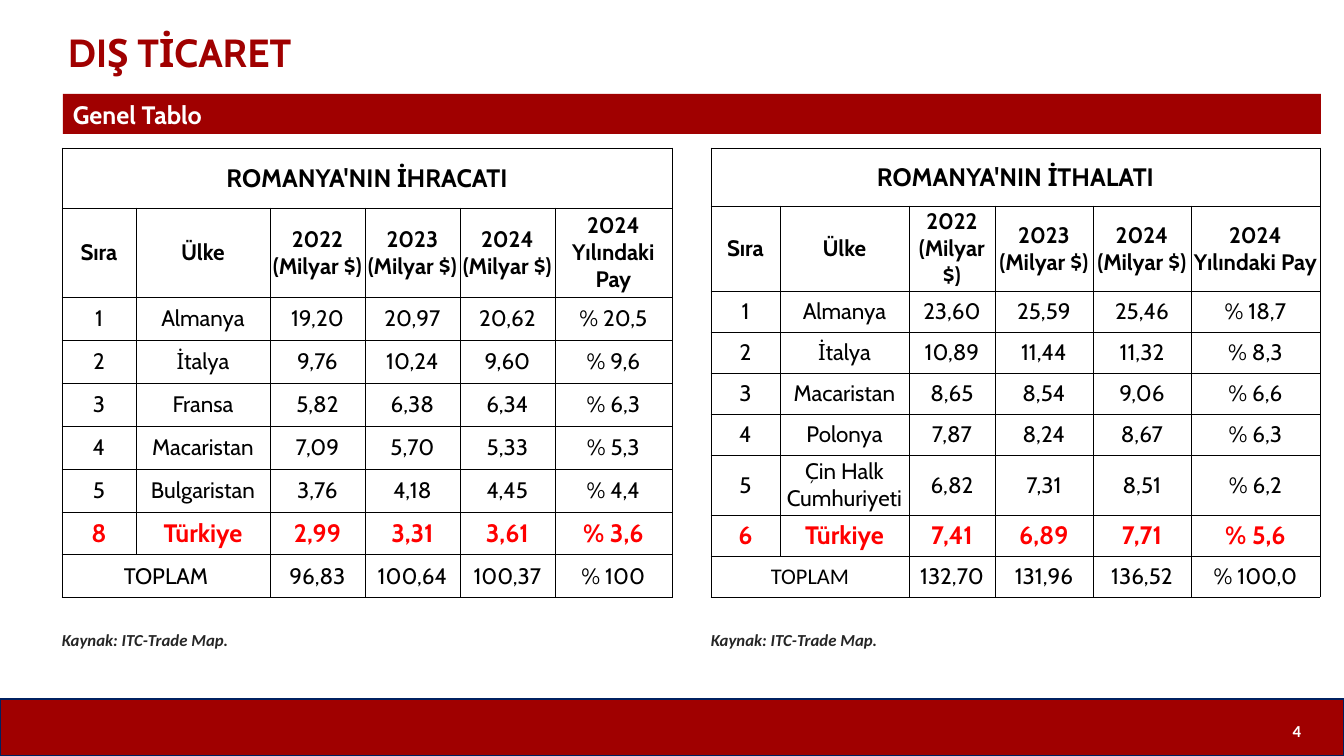
from lxml import etree
from pptx import Presentation
from pptx import util as u
from pptx.dml import color
from pptx.enum import shapes, text
from pptx.oxml import ns

EMU_PER_PX = 914400 / 100.8
RED, BLACK, WHITE, ALERT = "A00000", "000000", "FFFFFF", "FF0000"
ALIGN, ANCHOR = text.PP_ALIGN, text.MSO_ANCHOR
CENTER, MIDDLE = ALIGN.CENTER, ANCHOR.MIDDLE
TABLE_TOP, SOURCE_TOP = 148, 626

HEADINGS = ["Sıra", "Ülke", "2022 (Milyar $)", "2023 (Milyar $)",
            "2024 (Milyar $)", "2024 Yılındaki Pay"]
EXPORTS = dict(
    title="ROMANYA'NIN İHRACATI", left=62, total_font="Cabin",
    columns=[74, 134, 95, 95, 95, 117], heights=[60, 89] + [43] * 7,
    rows=[
        ["1", "Almanya", "19,20", "20,97", "20,62", "% 20,5"],
        ["2", "İtalya", "9,76", "10,24", "9,60", "% 9,6"],
        ["3", "Fransa", "5,82", "6,38", "6,34", "% 6,3"],
        ["4", "Macaristan", "7,09", "5,70", "5,33", "% 5,3"],
        ["5", "Bulgaristan", "3,76", "4,18", "4,45", "% 4,4"],
        ["8", "Türkiye", "2,99", "3,31", "3,61", "% 3,6"],
        ["TOPLAM", "", "96,83", "100,64", "100,37", "% 100"],
    ])
IMPORTS = dict(
    title="ROMANYA'NIN İTHALATI", left=711, total_font="Calibri",
    columns=[69, 129, 86, 98, 98, 129],
    heights=[58, 85] + [41] * 4 + [60] + [41] * 2,
    rows=[
        ["1", "Almanya", "23,60", "25,59", "25,46", "% 18,7"],
        ["2", "İtalya", "10,89", "11,44", "11,32", "% 8,3"],
        ["3", "Macaristan", "8,65", "8,54", "9,06", "% 6,6"],
        ["4", "Polonya", "7,87", "8,24", "8,67", "% 6,3"],
        ["5", "Çin Halk Cumhuriyeti", "6,82", "7,31", "8,51", "% 6,2"],
        ["6", "Türkiye", "7,41", "6,89", "7,71", "% 5,6"],
        ["TOPLAM", "", "132,70", "131,96", "136,52", "% 100,0"],
    ])


def px(length):
    return u.Emu(round(length * EMU_PER_PX))


def rgb(value):
    return color.RGBColor.from_string(value)


def set_margins(target, margins):
    for side, margin in zip(("left", "top", "right", "bottom"), margins):
        setattr(target, f"margin_{side}", px(margin))


def write(frame, words, size, tint, align=ALIGN.LEFT, **format_values):
    para = frame.paragraphs[0]
    para.alignment = align
    span = para.add_run()
    span.text = words
    values = {"name": "Cabin", "size": u.Pt(size), "bold": True, **format_values}
    for name, value in values.items():
        setattr(span.font, name, value)
    span.font.color.rgb = rgb(tint)
    return para


def add_panel(page, kind, area, fill=None, line=None):
    panel = page.shapes.add_shape(kind, *map(px, area))
    panel.shadow.inherit = False
    if fill:
        panel.fill.solid()
        panel.fill.fore_color.rgb = rgb(fill)
    else:
        panel.fill.background()
    if line:
        panel.line.color.rgb = rgb(line)
        panel.line.width = u.Pt(1)
    else:
        panel.line.fill.background()
    return panel


def add_text_frame(page, area, margins, anchor=ANCHOR.TOP):
    frame = page.shapes.add_textbox(*map(px, area)).text_frame
    frame.word_wrap = True
    frame.vertical_anchor = anchor
    set_margins(frame, margins)
    return frame


def add_borders(cell):
    properties = cell._tc.get_or_add_tcPr()
    for side in ("lnL", "lnR", "lnT", "lnB"):
        border = etree.SubElement(properties, ns.qn(f"a:{side}"), w=str(u.Pt(0.5)))
        fill = etree.SubElement(border, ns.qn("a:solidFill"))
        etree.SubElement(fill, ns.qn("a:srgbClr"), val=BLACK)


def cell_format(row, column, last_row, total_font):
    if row == 0:
        return dict(size=18, tint=BLACK)
    if row == last_row - 1:
        return dict(size=18, tint=ALERT)
    name = total_font if (row, column) == (last_row, 0) else "Cabin"
    return dict(size=16, tint=BLACK, bold=row == 1, name=name)


def add_trade_table(page, title, left, total_font, columns, heights, rows):
    grid = [[title] + [""] * 5, HEADINGS] + rows
    last_row = len(grid) - 1
    area = (left, TABLE_TOP, sum(columns), sum(heights))
    table = page.shapes.add_table(len(grid), len(columns), *map(px, area)).table
    table.first_row = table.horz_banding = False
    for column, width in zip(table.columns, columns):
        column.width = px(width)
    for row, height in zip(table.rows, heights):
        row.height = px(height)
    for i, line in enumerate(grid):
        for j, words in enumerate(line):
            cell = table.cell(i, j)
            cell.vertical_anchor = MIDDLE
            set_margins(cell, (1, 1, 1, 0))
            add_borders(cell)
            cell.fill.background()
            if words:
                write(cell.text_frame, words, align=CENTER,
                      **cell_format(i, j, last_row, total_font))
    # Title and total labels span several columns
    table.cell(0, 0).merge(table.cell(0, 5))
    table.cell(last_row, 0).merge(table.cell(last_row, 1))


def add_source(page, left):
    frame = add_text_frame(page, (left, SOURCE_TOP, 387, 36), (0, 4, 0, 0))
    write(frame, "Kaynak: ITC-Trade Map.", 12, "262626", name="Calibri", italic=True)


def main():
    deck = Presentation()
    deck.slide_width, deck.slide_height = px(1344), px(756)
    page = deck.slides.add_slide(deck.slide_layouts[6])

    # Footer with page number
    rectangle = shapes.MSO_SHAPE.RECTANGLE
    add_panel(page, rectangle, (0, 699, 1344, 57), RED, "002060")
    number = add_panel(page, shapes.MSO_SHAPE.ROUND_2_SAME_RECTANGLE,
                       (1273, 700, 48, 59)).text_frame
    number.vertical_anchor = MIDDLE
    write(number, "4", 12, WHITE, CENTER, name="Calibri")

    # Title and section bar
    title = add_text_frame(page, (63, 0, 796, 109), (5, 5, 5, 5), MIDDLE)
    write(title, "DIŞ TİCARET", 28, RED).line_spacing = 0.9
    bar = add_panel(page, rectangle, (63, 94, 1258, 40), RED).text_frame
    bar.vertical_anchor = ANCHOR.TOP
    write(bar, "Genel Tablo", 18, WHITE, ALIGN.JUSTIFY)

    # Trade tables with their sources
    for trade in (EXPORTS, IMPORTS):
        add_trade_table(page, **trade)
        add_source(page, trade["left"])

    deck.save("out.pptx")


if __name__ == "__main__":
    main()
